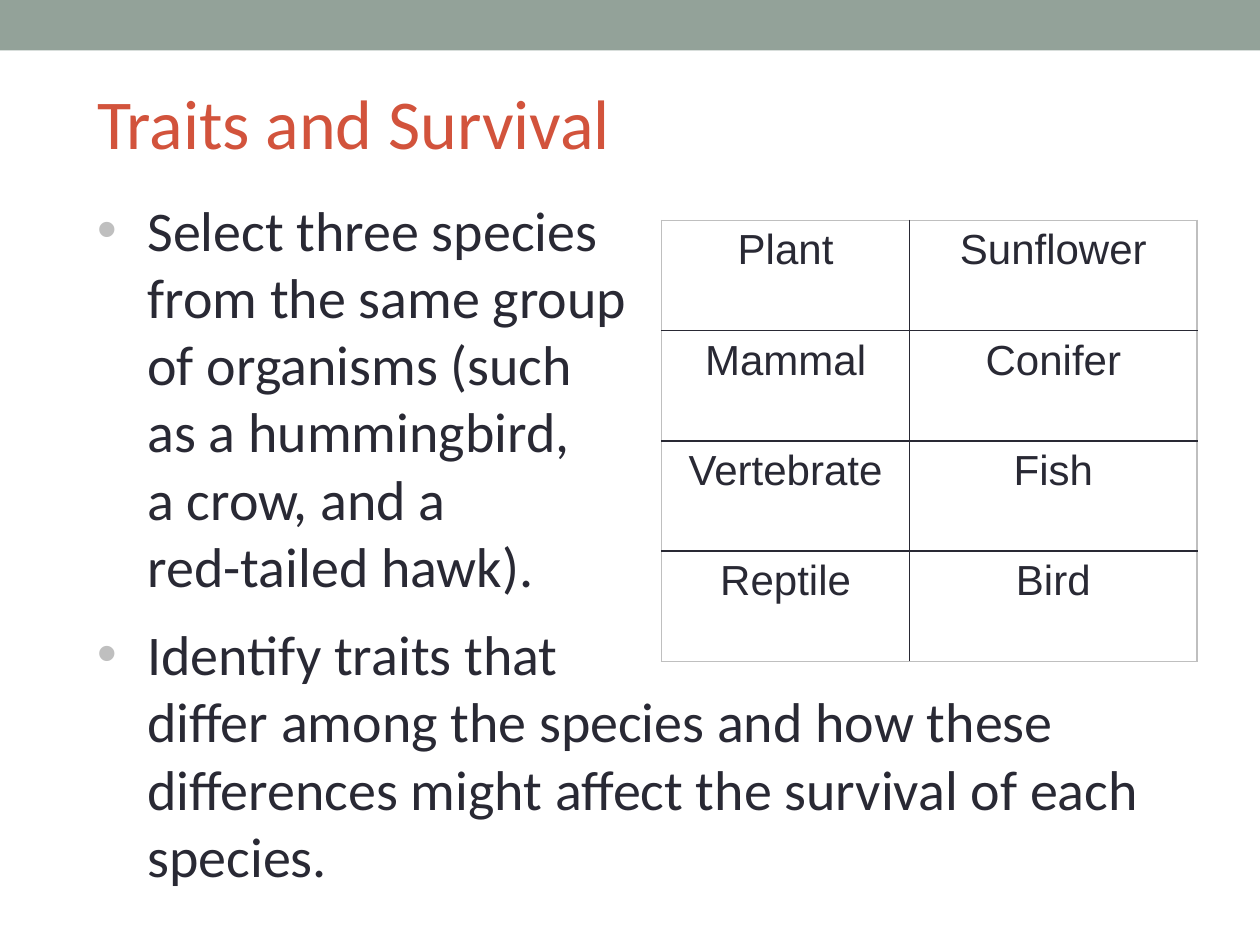
from lxml import etree
from pptx import Presentation
from pptx.dml.color import RGBColor
from pptx.enum import shapes, text
from pptx.oxml import ns
from pptx.util import Inches, Pt

INK, RULE, GREY = "292934", "D2533C", "BFBFBF"


def colour(hex_string):
    return RGBColor.from_string(hex_string)


def add_xml(parent, tag, position=None, **attributes):
    """Add a DrawingML child, at the end unless a position is given."""
    child = etree.Element(ns.qn(tag), attributes)
    parent.insert(len(parent) if position is None else position, child)
    return child


prs = Presentation()
prs.slide_width, prs.slide_height = Inches(10), Inches(7.5)
slide = prs.slides.add_slide(prs.slide_layouts[1])

band = slide.shapes.add_shape(
    shapes.MSO_SHAPE.RECTANGLE, 0, 0, prs.slide_width, Inches(0.4))
band.shadow.inherit = False
band.fill.solid()
band.fill.fore_color.rgb = colour("93A299")
band.line.fill.background()

# Title and instructions
title, instructions = slide.placeholders
title.text_frame.text = "Traits and Survival"
instructions.text_frame.text = (
    "Select three species \vfrom the same group \vof organisms (such \v"
    "as a hummingbird, \va crow, and a \vred-tailed hawk).\n"
    "Identify traits that \vdiffer among the species and how these "
    "differences might affect the survival of each species.")

for holder, box, size, ink in (
        (title, (0.67, 0.58, 8.58, 0.77), 40, RULE),
        (instructions, (0.67, 1.5, 8.75, 5.65), 32, INK)):
    holder.left, holder.top, holder.width, holder.height = map(Inches, box)
    frame = holder.text_frame
    frame.word_wrap = True
    frame.auto_size = text.MSO_AUTO_SIZE.NONE
    frame.vertical_anchor = text.MSO_ANCHOR.TOP
    for paragraph in frame.paragraphs:
        paragraph.alignment = text.PP_ALIGN.LEFT
        for run in paragraph.runs:
            run.font.name = "Calibri"
            run.font.size = Pt(size)
            run.font.color.rgb = colour(ink)

indent = Inches(0.4)
for paragraph, gap in zip(instructions.text_frame.paragraphs, (6, 12)):
    paragraph.space_before = Pt(gap)
    properties = paragraph._p.get_or_add_pPr()
    properties.set("marL", str(indent))
    properties.set("indent", str(-indent))
    add_xml(add_xml(properties, "a:buClr"), "a:srgbClr", val=GREY)
    add_xml(properties, "a:buFont", typeface="Arial")
    add_xml(properties, "a:buChar", char="•")

# Organism groups
groups = (("Plant", "Sunflower"), ("Mammal", "Conifer"),
          ("Vertebrate", "Fish"), ("Reptile", "Bird"))
table = slide.shapes.add_table(
    4, 2, Inches(5.25), Inches(1.75), Inches(4.25), Inches(3.5)).table
table.first_row = table.horz_banding = False
table.columns[0].width, table.columns[1].width = Inches(1.97), Inches(2.28)

for r, group in enumerate(groups):
    for c, organism in enumerate(group):
        cell = table.cell(r, c)
        cell.text_frame.text = organism
        paragraph = cell.text_frame.paragraphs[0]
        paragraph.alignment = text.PP_ALIGN.CENTER
        font = paragraph.runs[0].font
        font.name, font.size = "Arial", Pt(24)
        font.color.rgb = colour(INK)
        cell.fill.solid()
        cell.fill.fore_color.rgb = colour("FFFFFF")
        # Inner borders are dark, the outer frame is grey
        outer = (c == 0, c == 1, r == 0, r == 3)
        for position, (side, is_outer) in enumerate(zip("LRTB", outer)):
            border = add_xml(cell._tc.get_or_add_tcPr(), f"a:ln{side}",
                             position, w=str(Pt(1)))
            add_xml(add_xml(border, "a:solidFill"), "a:srgbClr",
                    val=GREY if is_outer else INK)

prs.save("out.pptx")
